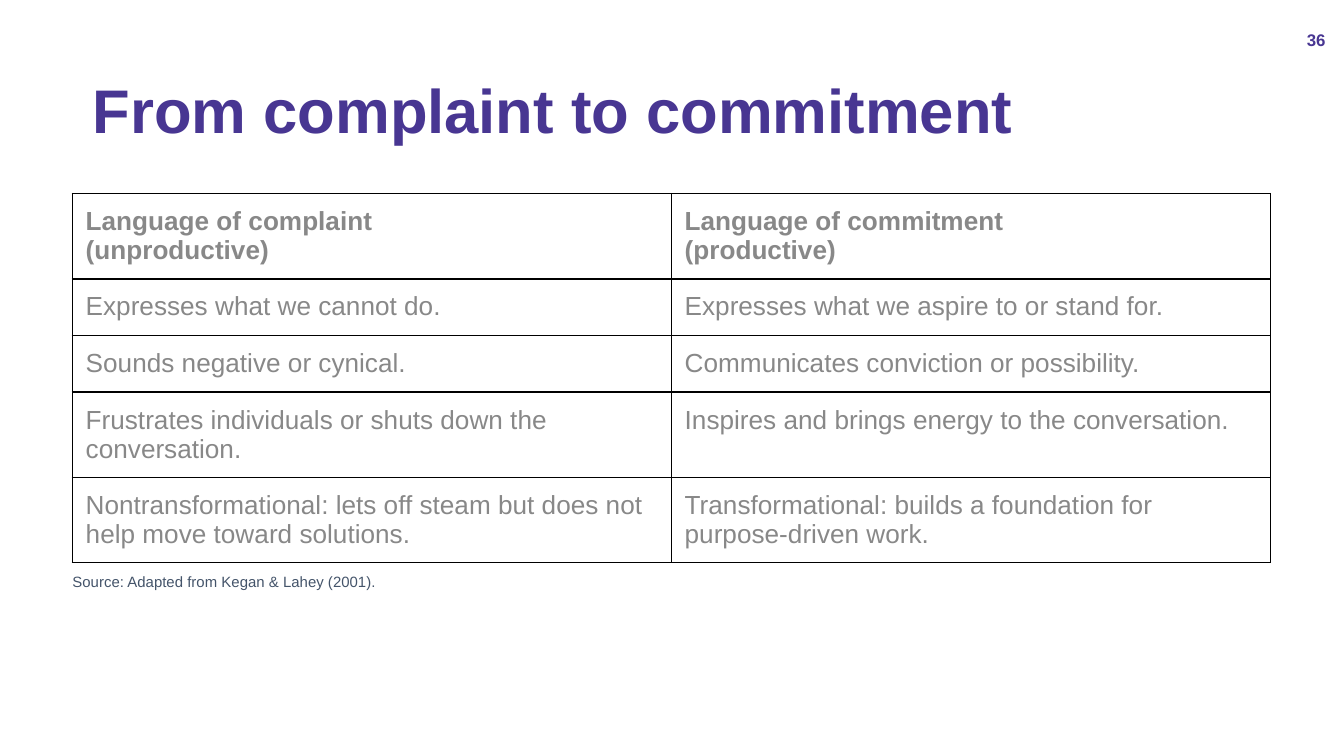
from dataclasses import dataclass

import pptx
import pptx.dml.color
import pptx.enum.text
import pptx.oxml
import pptx.oxml.ns
import pptx.util
from pptx.util import Cm

COLOURS = {"purple": "483692", "grey": "888888", "slate": "44546A", "border": "000000"}
FONT = "Arial"
ALIGN = pptx.enum.text.PP_ALIGN
ANCHOR = pptx.enum.text.MSO_ANCHOR

COLUMN_WIDTH = Cm(11.32)
ROW_HEIGHT = Cm(1.07)
CELL_MARGIN = Cm(0.25)
BORDER_WIDTH = pptx.util.Pt(1)

COMPARISON = [
    ("Language of complaint\n(unproductive)", "Language of commitment\n(productive)"),
    ("Expresses what we cannot do.", "Expresses what we aspire to or stand for."),
    ("Sounds negative or cynical.", "Communicates conviction or possibility."),
    ("Frustrates individuals or shuts down the conversation.",
     "Inspires and brings energy to the conversation."),
    ("Nontransformational: lets off steam but does not help move toward solutions.",
     "Transformational: builds a foundation for purpose-driven work."),
]


@dataclass
class Label:
    text: str
    left: float
    top: float
    width: float
    height: float
    size: float
    colour: str
    bold: bool = False
    align: ALIGN = ALIGN.LEFT
    anchor: ANCHOR = ANCHOR.MIDDLE
    left_margin: float = 0
    line_spacing: float = 1.0


LABELS = [
    Label("From complaint to commitment", 1.75, 0.76, 21.9, 2.77, 33, "purple",
          bold=True, line_spacing=0.9),
    Label("36", 24.16, 0.38, 1.07, 0.76, 9, "purple", bold=True,
          align=ALIGN.RIGHT, left_margin=0.18),
    Label("Source: Adapted from Kegan & Lahey (2001).", 1.37, 10.77, 18.44, 1.3, 8,
          "slate", anchor=ANCHOR.TOP, line_spacing=0.9),
]


def format_runs(frame: pptx.text.text.TextFrame, size: float, colour: str, bold: bool) -> None:
    for paragraph in frame.paragraphs:
        for run in paragraph.runs:
            run.font.name = FONT
            run.font.size = pptx.util.Pt(size)
            run.font.bold = bold
            run.font.color.rgb = pptx.dml.color.RGBColor.from_string(COLOURS[colour])


def add_label(slide: pptx.slide.Slide, label: Label) -> None:
    box = slide.shapes.add_textbox(
        Cm(label.left), Cm(label.top), Cm(label.width), Cm(label.height))
    frame = box.text_frame
    frame.word_wrap = True
    frame.vertical_anchor = label.anchor
    frame.margin_left = Cm(label.left_margin)
    frame.margin_right = Cm(0.18)
    frame.margin_top = frame.margin_bottom = Cm(0.1)
    frame.text = label.text
    frame.paragraphs[0].alignment = label.align
    frame.paragraphs[0].line_spacing = label.line_spacing
    format_runs(frame, label.size, label.colour, label.bold)


def add_borders(cell: pptx.table._Cell) -> None:
    """Draw all four sides; they must precede the fill in the cell properties."""
    properties = cell._tc.get_or_add_tcPr()
    for position, side in enumerate(("lnL", "lnR", "lnT", "lnB")):
        properties.insert(position, pptx.oxml.parse_xml(
            f'<a:{side} {pptx.oxml.ns.nsdecls("a")} w="{BORDER_WIDTH}"><a:solidFill>'
            f'<a:srgbClr val="{COLOURS["border"]}"/></a:solidFill></a:{side}>'))


def add_comparison(slide: pptx.slide.Slide) -> None:
    row_count, column_count = len(COMPARISON), len(COMPARISON[0])
    table = slide.shapes.add_table(
        row_count, column_count, Cm(1.37), Cm(3.66),
        COLUMN_WIDTH * column_count, ROW_HEIGHT * row_count).table
    table.first_row = table.horz_banding = False
    for row_index, statements in enumerate(COMPARISON):
        for column_index, statement in enumerate(statements):
            cell = table.cell(row_index, column_index)
            cell.margin_left = cell.margin_right = CELL_MARGIN
            cell.margin_top = cell.margin_bottom = CELL_MARGIN
            cell.fill.background()
            add_borders(cell)
            cell.text_frame.text = statement
            format_runs(cell.text_frame, 14, "grey", bold=row_index == 0)


def main() -> None:
    presentation = pptx.Presentation()
    presentation.slide_width = Cm(25.4)
    presentation.slide_height = Cm(14.29)
    slide = presentation.slides.add_slide(presentation.slide_layouts[6])
    add_comparison(slide)
    for label in LABELS:
        add_label(slide, label)
    presentation.save("out.pptx")


if __name__ == "__main__":
    main()
